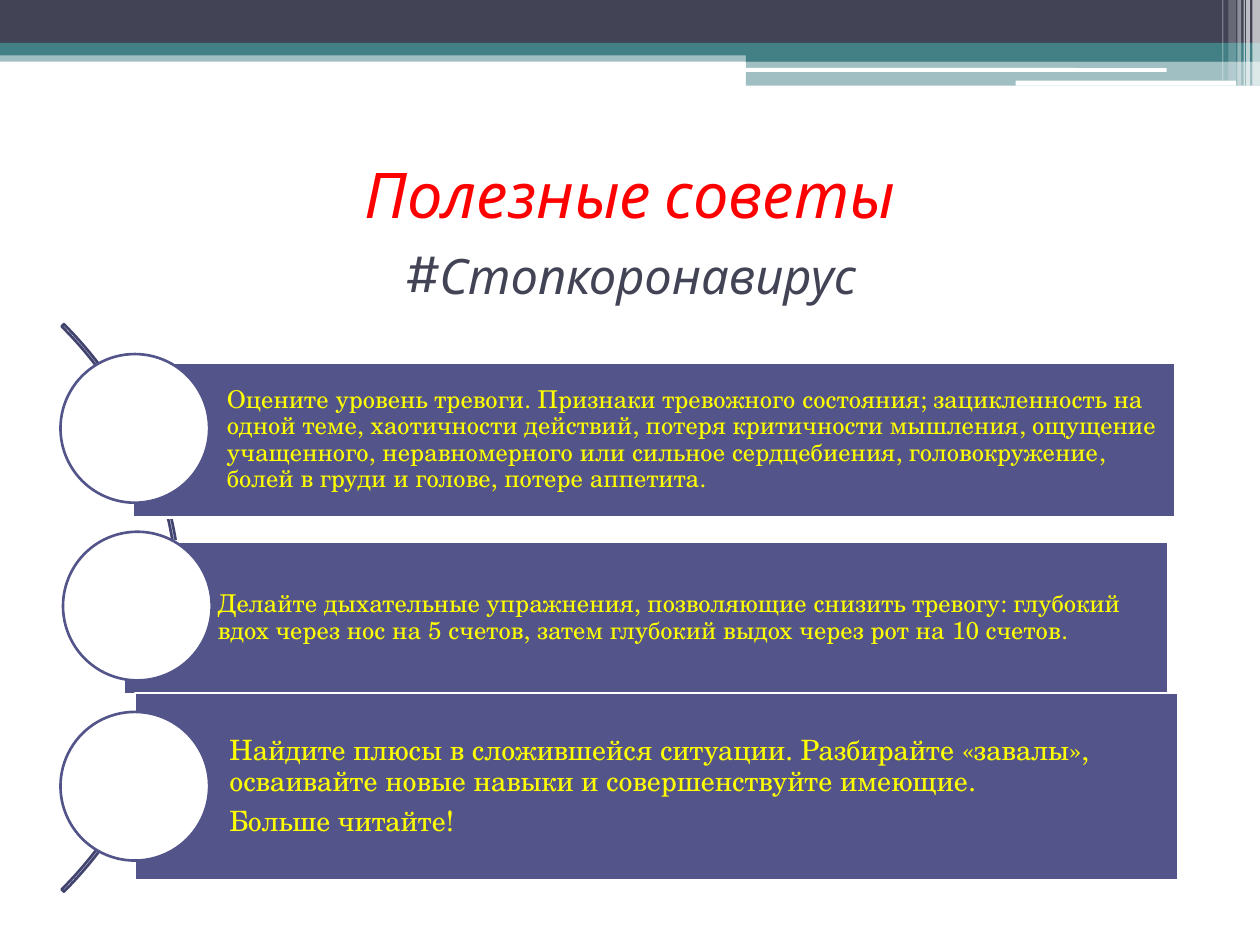
from lxml.etree import SubElement
from pptx import Presentation
from pptx.dml.color import RGBColor
from pptx.enum.shapes import MSO_SHAPE
from pptx.enum.text import MSO_ANCHOR, MSO_AUTO_SIZE, PP_ALIGN
from pptx.oxml.ns import qn
from pptx.util import Inches, Pt

WHITE = RGBColor(0xFF, 0xFF, 0xFF)
SLATE = RGBColor(0x42, 0x44, 0x56)
TEAL = RGBColor(0x43, 0x80, 0x86)
INDIGO = RGBColor(0x53, 0x54, 0x8A)
ARC_INDIGO = RGBColor(0x42, 0x43, 0x6F)
RED = RGBColor(0xFF, 0x00, 0x00)
YELLOW = RGBColor(0xFF, 0xFF, 0x00)


def add_figure(slide, kind, place, fill=None, opacity=100, line=None):
    """Add a preset shape at (left, top, width, height) in inches."""
    figure = slide.shapes.add_shape(kind, *map(Inches, place))
    figure.shadow.inherit = False
    if fill is None:
        figure.fill.background()
    else:
        figure.fill.solid()
        figure.fill.fore_color.rgb = fill
        if opacity < 100:
            color = figure.fill._xPr.find(".//" + qn("a:srgbClr"))
            SubElement(color, qn("a:alpha"), val=str(opacity * 1000))
    if line is None:
        figure.line.fill.background()
    else:
        figure.line.color.rgb = line
        figure.line.width = Pt(1.5)
    return figure


def add_span(para, text, size, font, color, italic=False):
    span = para.add_run()
    span.text = text
    span.font.size = Pt(size)
    span.font.name = font
    span.font.color.rgb = color
    span.font.italic = italic


deck = Presentation()
deck.slide_width, deck.slide_height = Inches(10), Inches(7.5)
page = deck.slides.add_slide(deck.slide_layouts[5])

# Header bands
for place, color, opacity in [
    ((0, 0.4, 10, 0.09), TEAL, 50),
    ((0, 0, 10, 0.34), SLATE, 100),
    ((0, 0.34, 10, 0.1), TEAL, 100),
    ((5.92, 0.39, 4.08, 0.1), TEAL, 100),
    ((5.92, 0.48, 4.08, 0.2), TEAL, 50),
]:
    add_figure(page, MSO_SHAPE.RECTANGLE, place, color, opacity)

for place in [(5.91, 0.54, 3.35, 0.03), (8.06, 0.64, 1.75, 0.04)]:
    add_figure(page, MSO_SHAPE.ROUNDED_RECTANGLE, place, WHITE)

# Translucent stripes in the right corner
for left, width, height, opacity in [
    (9.94, 0.06, 0.68, 65),
    (9.89, 0.03, 0.68, 65),
    (9.87, 0.01, 0.68, 60),
    (9.82, 0.03, 0.68, 40),
    (9.75, 0.06, 0.64, 20),
    (9.7, 0.01, 0.64, 30),
]:
    add_figure(page, MSO_SHAPE.RECTANGLE, (left, 0, width, height), WHITE, opacity)

# Title
title = page.shapes.title
title.left, title.top = Inches(0.5), Inches(1.25)
title.width, title.height = Inches(9), Inches(1.17)
frame = title.text_frame
frame.auto_size = MSO_AUTO_SIZE.NONE
frame.vertical_anchor = MSO_ANCHOR.MIDDLE
para = frame.paragraphs[0]
para.alignment = PP_ALIGN.CENTER
add_span(para, "Полезные советы", 36, "Karla", RED, italic=True)
para.add_line_break()
add_span(para, "#", 36, "Karla", SLATE, italic=True)
add_span(para, "Стопкоронавирус", 27.9, "Karla", SLATE, italic=True)

# Arc behind the cards
arc = add_figure(page, MSO_SHAPE.BLOCK_ARC, (-4.93, 1.64, 6.37, 6.37), line=ARC_INDIGO)
for index, value in enumerate((189, 27, 0.004)):
    arc.adjustments[index] = value

# Advice cards, each with a circle on its left edge
cards = [
    ((1.05, 2.88, 8.28, 1.23), (0.48, 2.81), 14, [
        "Оцените уровень тревоги. Признаки тревожного состояния; зацикленность на "
        "одной теме, хаотичности действий, потеря критичности мышления, ощущение "
        "учащенного, неравномерного или сильное сердцебиения, головокружение, "
        "болей в груди и голове, потере аппетита."]),
    ((0.98, 4.3, 8.29, 1.21), (0.5, 4.22), 14, [
        "Делайте дыхательные упражнения, позволяющие снизить тревогу: глубокий "
        "вдох через нос на 5 счетов, затем глубокий выдох через рот на 10 счетов."]),
    ((1.07, 5.5, 8.28, 1.49), (0.48, 5.65), 16, [
        "Найдите плюсы в сложившейся ситуации. Разбирайте «завалы», "
        "осваивайте новые навыки и совершенствуйте имеющие.",
        "Больше читайте!"]),
]
for place, circle_corner, size, advice in cards:
    card = add_figure(page, MSO_SHAPE.RECTANGLE, place, INDIGO, line=WHITE)
    frame = card.text_frame
    frame.word_wrap = True
    frame.vertical_anchor = MSO_ANCHOR.MIDDLE
    frame.margin_left = Inches(0.75)
    frame.margin_top = frame.margin_right = frame.margin_bottom = Inches(0.04)
    for index, text in enumerate(advice):
        para = frame.add_paragraph() if index else frame.paragraphs[0]
        para.alignment = PP_ALIGN.LEFT
        para.line_spacing = 0.9
        para.space_after = Pt(size * 0.35)
        add_span(para, text, size, "TeX Gyre Schola", YELLOW)
    add_figure(page, MSO_SHAPE.OVAL, (*circle_corner, 1.18, 1.18), WHITE, line=INDIGO)

deck.save("out.pptx")
